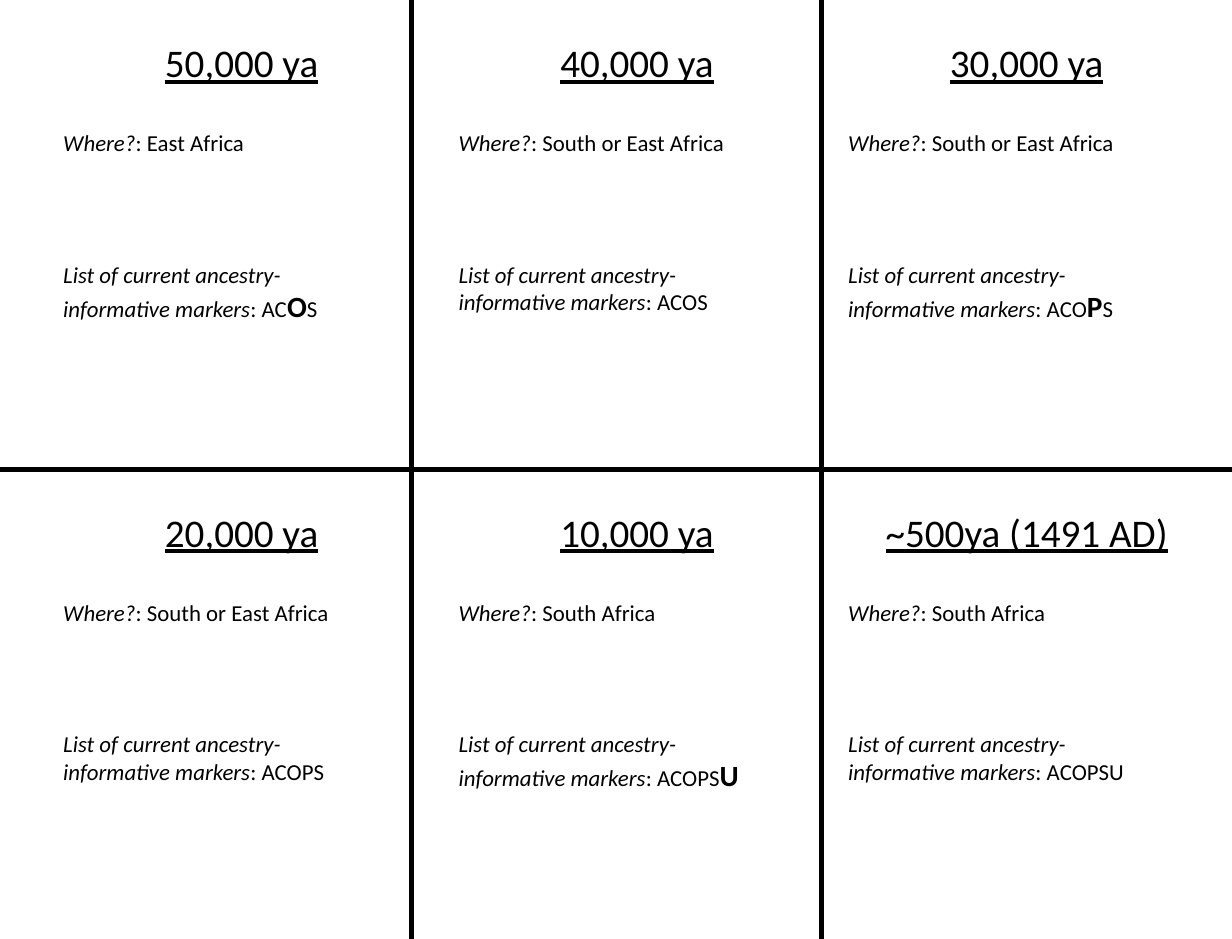
"""Build a six-panel slide of ancestry-informative markers through time."""
from pptx import Presentation
from pptx.dml.color import RGBColor
from pptx.enum.shapes import MSO_CONNECTOR
from pptx.enum.text import MSO_AUTO_SIZE, PP_ALIGN
from pptx.oxml.ns import qn
from pptx.util import Pt
from lxml.etree import SubElement

PANELS = [
    ("50,000 ya", "East Africa", ("AC", "O", "S")),
    ("40,000 ya", "South or East Africa", ("ACOS", "", "")),
    ("30,000 ya", "South or East Africa", ("ACO", "P", "S")),
    ("20,000 ya", "South or East Africa", ("ACOPS", "", "")),
    ("10,000 ya", "South Africa", ("ACOPS", "U", "")),
    ("~500ya (1491 AD)", "South Africa", ("ACOPSU", "", "")),
]
WHERE = "Where?"
MARKERS = "List of current ancestry-informative markers"

BLACK = RGBColor(0, 0, 0)
FONT = "Calibri"
TITLE_SIZE, BODY_SIZE, NEW_SIZE = 24, 14, 18
WIDTH, HEIGHT = 756, 576
ROW_HEIGHT = HEIGHT / 2
COLUMN_LEFTS = [31.7, 274.3, 513.4]
DIVIDERS = [252.5, 504]
TITLE_WIDTH, BODY_WIDTH = 233.3, 205.2
TITLE_TOP, WHERE_TOP, MARKERS_TOP = 20.2, 75.6, 156.2


def add_divider(page, x1, y1, x2, y2):
    line = page.shapes.add_connector(
        MSO_CONNECTOR.STRAIGHT, Pt(x1), Pt(y1), Pt(x2), Pt(y2))
    line.line.color.rgb = BLACK
    line.line.width = Pt(3)
    SubElement(line._element.spPr, qn("a:effectLst"))


def add_text(page, left, top, width, height, spans, align=PP_ALIGN.LEFT):
    box = page.shapes.add_textbox(Pt(left), Pt(top), Pt(width), Pt(height))
    frame = box.text_frame
    frame.word_wrap = True
    frame.auto_size = MSO_AUTO_SIZE.SHAPE_TO_FIT_TEXT
    para = frame.paragraphs[0]
    para.alignment = align
    for text, size, style in spans:
        if not text:
            continue
        span = para.add_run()
        span.text = text
        span.font.name = FONT
        span.font.size = Pt(size)
        span.font.color.rgb = BLACK
        if style:
            setattr(span.font, style, True)


def add_panel(page, left, top, title, place, markers):
    before, new, after = markers
    add_text(page, left, top + TITLE_TOP, TITLE_WIDTH, 36,
             [(title, TITLE_SIZE, "underline")], PP_ALIGN.CENTER)
    add_text(page, left, top + WHERE_TOP, BODY_WIDTH, 24.5,
             [(WHERE, BODY_SIZE, "italic"), (f": {place}", BODY_SIZE, None)])
    add_text(page, left, top + MARKERS_TOP, BODY_WIDTH, 46 if new else 41,
             [(MARKERS, BODY_SIZE, "italic"),
              (f": {before}", BODY_SIZE, None),
              (new, NEW_SIZE, "bold"),
              (after, BODY_SIZE, None)])


def main():
    deck = Presentation()
    deck.slide_width, deck.slide_height = Pt(WIDTH), Pt(HEIGHT)
    page = deck.slides.add_slide(deck.slide_layouts[6])
    add_divider(page, 0, ROW_HEIGHT, WIDTH, ROW_HEIGHT)
    for x in DIVIDERS:
        add_divider(page, x, 0, x, HEIGHT)
    for index, panel in enumerate(PANELS):
        row, column = divmod(index, len(COLUMN_LEFTS))
        add_panel(page, COLUMN_LEFTS[column], row * ROW_HEIGHT, *panel)
    deck.save("out.pptx")


if __name__ == "__main__":
    main()
